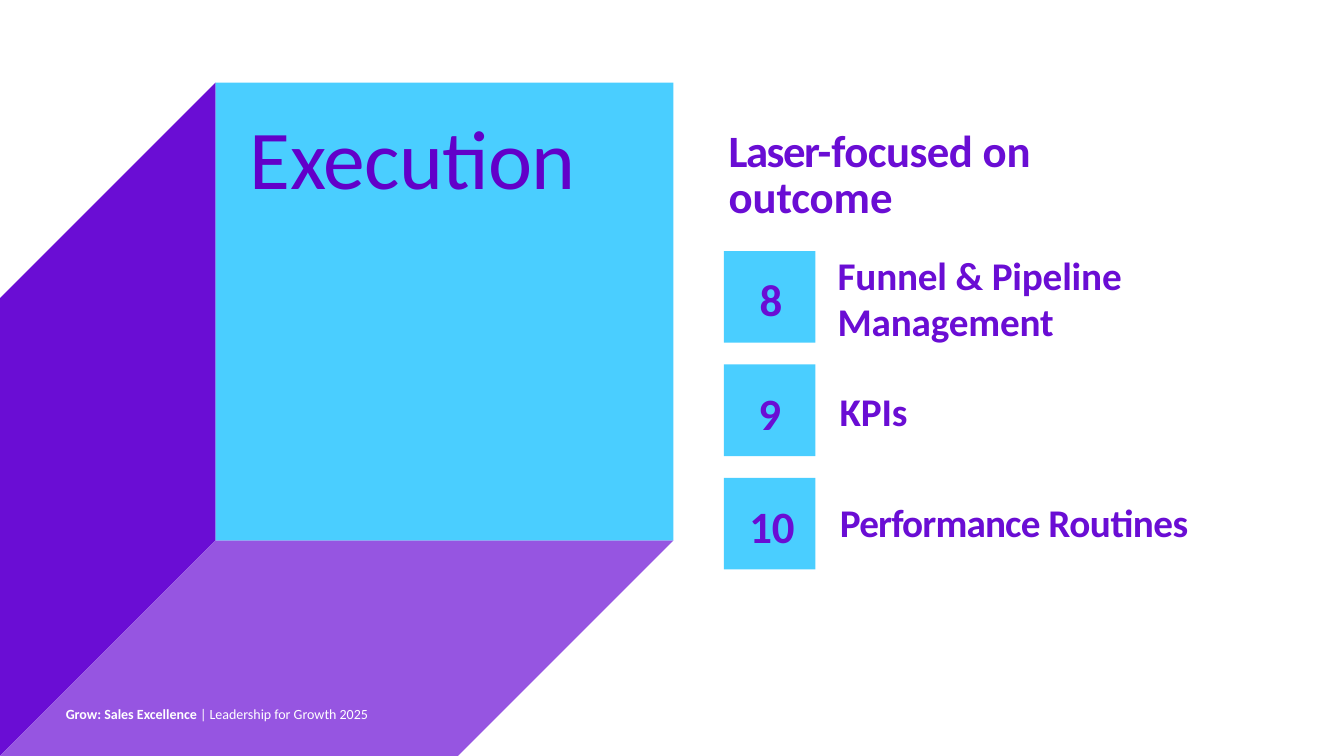
import pptx
import pptx.dml.color
import pptx.enum.shapes
import pptx.enum.text
import pptx.util

Pt = pptx.util.Pt
ALIGN = pptx.enum.text.PP_ALIGN
ANCHOR = pptx.enum.text.MSO_ANCHOR
PURPLE, LILAC, SKY, WHITE = "6A0DD4", "9655E1", "4ACEFF", "FFFFFF"


def color(value):
    return pptx.dml.color.RGBColor.from_string(value)


def paint(shape, fill):
    shape.shadow.inherit = False
    shape.fill.solid()
    shape.fill.fore_color.rgb = color(fill)
    shape.line.fill.background()


def write(shape, runs, size, ink=PURPLE, bold=True, align=ALIGN.LEFT,
          left=0, top=0, leading=None, anchor=ANCHOR.TOP):
    """Fill a shape with one paragraph of (text, letter spacing) runs."""
    frame = shape.text_frame
    frame.word_wrap = True
    frame.vertical_anchor = anchor
    frame.margin_left, frame.margin_top = Pt(left), Pt(top)
    frame.margin_right = frame.margin_bottom = 0
    paragraph = frame.paragraphs[0]
    paragraph.alignment = align
    if leading:
        paragraph.line_spacing = Pt(leading)
    font = paragraph.font
    font.name, font.size, font.bold = "Calibri", Pt(size), bold
    font.color.rgb = color(ink)
    for text, spacing in runs:
        run = paragraph.add_run()
        run.text = text
        if spacing:
            run._r.get_or_add_rPr().set("spc", str(round(spacing * 100)))
    return paragraph


def add_text(slide, left, top, width, height, runs, size, **style):
    box = slide.shapes.add_textbox(Pt(left), Pt(top), Pt(width), Pt(height))
    return write(box, runs, size, **style)


def add_square(slide, left, top, side):
    square = slide.shapes.add_shape(pptx.enum.shapes.MSO_SHAPE.RECTANGLE,
                                    Pt(left), Pt(top), Pt(side), Pt(side))
    paint(square, SKY)
    return square


def add_face(slide, points, fill):
    builder = slide.shapes.build_freeform(*points[0], scale=Pt(1))
    builder.add_line_segments(points[1:], close=True)
    paint(builder.convert_to_shape(), fill)


def add_cube(slide, left, top, side, depth):
    right, bottom = left + side, top + side
    # Side and bottom faces recede down and to the left
    add_face(slide, [(left, top), (left - depth, top + depth),
                     (left - depth, bottom + depth), (left, bottom)], PURPLE)
    add_face(slide, [(right, bottom), (left, bottom),
                     (left - depth, bottom + depth),
                     (right - depth, bottom + depth)], LILAC)
    # Front face with the title
    front = add_square(slide, left, top, side)
    write(front, [("Execution", -0.4)], 59.7, ink="6200C9", bold=False,
          left=24.5, top=16.5)


def add_topics(slide, left, top, width):
    tile, pitch = 65.5, 81
    # Number, nudge, label runs, label offset from the tile, leading
    topics = [
        ("8", 2, [("Funnel & Pipeline Management", -0.1)], 81.3, 0.7, 32.9),
        ("9", 0, [("KPIs", -0.1)], 82.8, 16.6, None),
        ("10", 3.4, [("Performance ", -0.6), ("Routines", -0.3)],
         83, 14.4, None),
    ]
    for index, (number, nudge, label, across, down, leading) in enumerate(topics):
        y = top + index * pitch
        square = add_square(slide, left, y, tile)
        write(square, [(number, -0.2)], 32, align=ALIGN.CENTER,
              left=nudge, top=15.1)
        add_text(slide, left + across, y + down, width - across, 34,
                 label, 28, leading=leading)


def add_heading(slide, left, top, width):
    runs = [("Laser-", -1.1), ("focused ", -0.4), ("on ", 0), ("outcome", -0.1)]
    add_text(slide, left, top, width, 67, runs, 32, leading=32.9)


def add_footer(slide, left, top, width):
    paragraph = add_text(
        slide, left, top, width, 12,
        [("Grow: Sales Excellence ", 0), ("| Leadership for Growth 2025", 0)],
        10, ink=WHITE, anchor=ANCHOR.MIDDLE)
    paragraph.runs[1].font.bold = False


def main():
    presentation = pptx.Presentation()
    presentation.slide_width, presentation.slide_height = Pt(960), Pt(540)
    slide = presentation.slides.add_slide(presentation.slide_layouts[6])
    add_cube(slide, 154, 59, 327, 154)
    add_heading(slide, 520.5, 93, 273)
    add_topics(slide, 517, 179.3, 393)
    add_footer(slide, 47, 504, 307)
    presentation.save("out.pptx")


if __name__ == "__main__":
    main()
